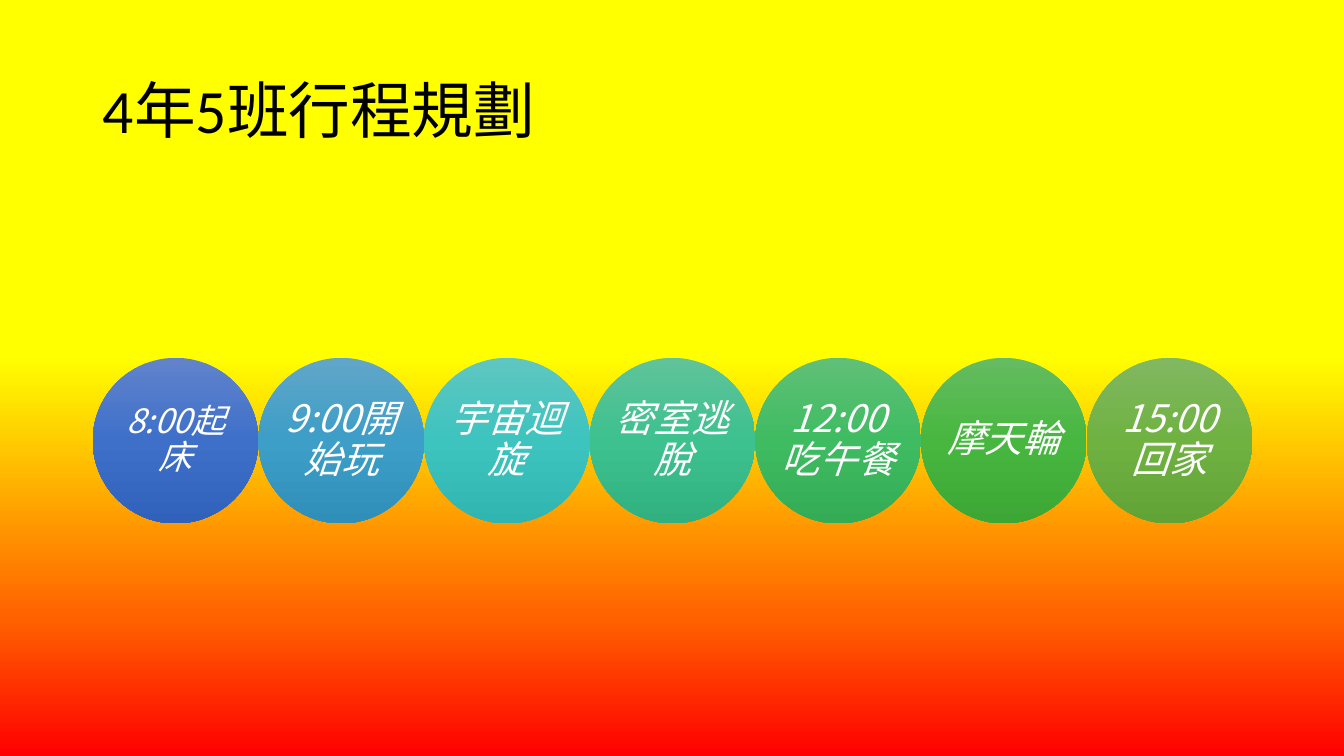
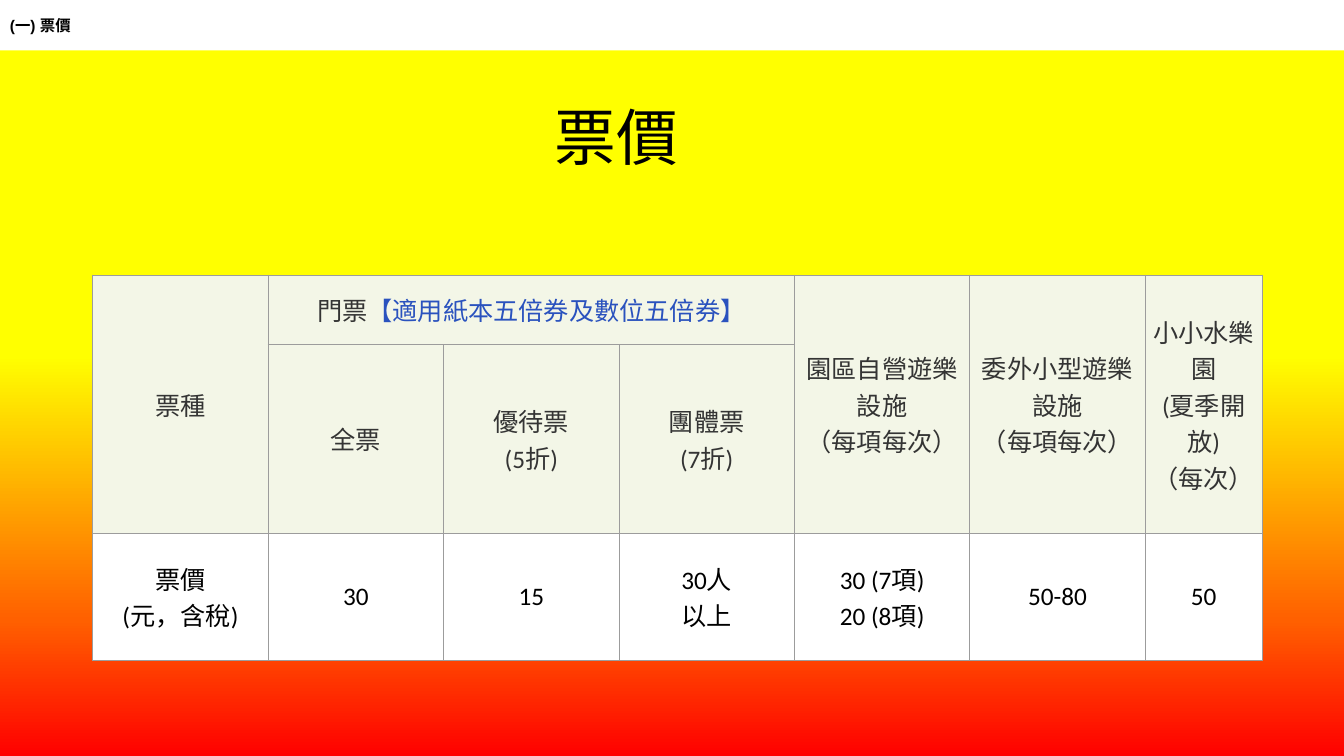
import copy

import lxml.etree
import pptx
import pptx.dml.color
import pptx.enum.shapes
import pptx.enum.text
import pptx.oxml.ns
import pptx.util

Inches = pptx.util.Inches
Pt = pptx.util.Pt
rgb = pptx.dml.color.RGBColor.from_string
qn = pptx.oxml.ns.qn
align = pptx.enum.text.PP_ALIGN
MIDDLE = pptx.enum.text.MSO_ANCHOR.MIDDLE
shape_types = pptx.enum.shapes.MSO_SHAPE

BLACK, WHITE = "000000", "FFFFFF"
TITLE_STYLE = dict(size=44, spacing=0.9)


def write(frame, text, size=18, color=BLACK, font="Calibri", bold=False, italic=False,
          alignment=align.LEFT, spacing=1.0, accent="", accent_color=BLACK):
    """Write one paragraph per line; the accent follows in its own colour."""
    frame.word_wrap = True
    for number, line in enumerate(text.split("\n")):
        paragraph = frame.add_paragraph() if number else frame.paragraphs[0]
        paragraph.alignment = alignment
        paragraph.line_spacing = spacing
        for words, words_color in ((line, color), (accent, accent_color)):
            if words:
                run = paragraph.add_run()
                run.text = words
                run.font.size = Pt(size)
                run.font.name = font
                run.font.bold = bold
                run.font.italic = italic
                run.font.color.rgb = rgb(words_color)


def shade(fill, element, stops):
    """Give a fill a gradient that runs from top to bottom."""
    fill.gradient()
    fill.gradient_angle = 270
    stop_list = element.xpath(".//a:gsLst")[0]
    while len(stop_list) < len(stops):
        stop_list.append(copy.deepcopy(stop_list[0]))
    for stop, (position, color) in zip(fill.gradient_stops, stops):
        stop.position = position
        stop.color.rgb = rgb(color)


prs = pptx.Presentation()
prs.slide_width = Inches(13.33)
prs.slide_height = Inches(7.5)

# Shared background
master = prs.slide_master
shade(master.background.fill, master.element,
      [(0.47, "FFFF00"), (0.82, "FF6000"), (1, "FF0000")])

# Titles of both slides
slides = []
for heading, left, top, width, height in (
    ("4年5班行程規劃", 0.92, 0.4, 11.5, 1.45),
    ("票價", 5.4, 0.61, 2.63, 1.57),
):
    slide = prs.slides.add_slide(prs.slide_layouts[5])
    title = slide.shapes.title
    title.left, title.top = Inches(left), Inches(top)
    title.width, title.height = Inches(width), Inches(height)
    title.text_frame.vertical_anchor = MIDDLE
    title.text_frame.auto_size = pptx.enum.text.MSO_AUTO_SIZE.NONE
    write(title.text_frame, heading, **TITLE_STYLE)
    slides.append(slide)
schedule, prices = slides

# Schedule: a row of touching circles
DIAMETER = 11.5 / 7
steps = [
    ("8:00起床", 24, "6183CB", "3E70CA", "3062BB"),
    ("9:00開始玩", 27, "61A6C8", "3D9EC7", "308FB8"),
    ("宇宙迴旋", 27, "60C6C1", "3DC4BF", "30B5B0"),
    ("密室逃脫", 27, "60C39A", "3DC18F", "31B080"),
    ("12:00吃午餐", 27, "60C077", "3FBC62", "33AC55"),
    ("摩天輪", 27, "65BC61", "48B740", "3CA735"),
    ("15:00回家", 27, "81B861", "6FB242", "62A336"),
]
for index, (activity, size, *colors) in enumerate(steps):
    circle = schedule.shapes.add_shape(
        shape_types.OVAL, Inches(0.92 + index * DIAMETER), Inches(3.55),
        Inches(DIAMETER), Inches(DIAMETER))
    circle.shadow.inherit = False
    circle.line.fill.background()
    shade(circle.fill, circle.element, list(zip((0, 0.5, 1), colors)))
    frame = circle.text_frame
    frame.margin_left = frame.margin_right = frame.margin_top = frame.margin_bottom = 0
    frame.vertical_anchor = MIDDLE
    write(frame, activity, size=size, color=WHITE, font="Noto Sans CJK JP",
          italic=True, alignment=align.CENTER, spacing=0.9)

# Price table
price_rows = [
    ["票種", "門票", "", "", "園區自營遊樂設施\n（每項每次）",
     "委外小型遊樂設施\n（每項每次）", "小小水樂園\n(夏季開放)\n（每次）"],
    ["", "全票", "優待票\n(5折)", "團體票\n(7折)", "", "", ""],
    ["票價\n(元，含稅)", "30", "15", "30人\n以上", "30 (7項)\n20 (8項)", "50-80", "50"],
]
column_widths = [1.74] * 6 + [1.16]
row_heights = [0.69, 1.72, 1.26]
table = prices.shapes.add_table(
    len(row_heights), len(column_widths), Inches(0.92), Inches(2.73),
    Inches(sum(column_widths)), Inches(sum(row_heights))).table
table.first_row = table.horz_banding = False
for column, width in zip(table.columns, column_widths):
    column.width = Inches(width)
for row, height in zip(table.rows, row_heights):
    row.height = Inches(height)

# Merged headings
table.cell(0, 1).merge(table.cell(0, 3))
for column_index in (0, 4, 5, 6):
    table.cell(0, column_index).merge(table.cell(1, column_index))

for row_index, entries in enumerate(price_rows):
    is_heading = row_index < 2
    for column_index, entry in enumerate(entries):
        cell = table.cell(row_index, column_index)
        cell.margin_left = cell.margin_right = Inches(0.03)
        cell.margin_top = cell.margin_bottom = Inches(0.03)
        cell.vertical_anchor = MIDDLE
        properties = cell._tc.get_or_add_tcPr()
        for side in ("a:lnL", "a:lnR", "a:lnT", "a:lnB"):
            border = lxml.etree.SubElement(properties, qn(side), w=str(Pt(0.75)))
            paint = lxml.etree.SubElement(border, qn("a:solidFill"))
            lxml.etree.SubElement(paint, qn("a:srgbClr"), val="9C9C9C")
        cell.fill.solid()
        cell.fill.fore_color.rgb = rgb("F3F6E7" if is_heading else WHITE)
        if entry:
            write(cell.text_frame, entry, color="343434" if is_heading else BLACK,
                  alignment=align.CENTER, accent_color="2A52BE",
                  accent="【適用紙本五倍券及數位五倍券】" if entry == "門票" else "")

# Section band across the top
band = prices.shapes.add_shape(shape_types.RECTANGLE, 0, 0, prs.slide_width, Inches(0.5))
band.shadow.inherit = False
band.fill.solid()
band.fill.fore_color.rgb = rgb(WHITE)
band.line.fill.background()
band.text_frame.vertical_anchor = MIDDLE
write(band.text_frame, "(一) 票價", size=11, font="Arial", bold=True)

prs.save("out.pptx")
